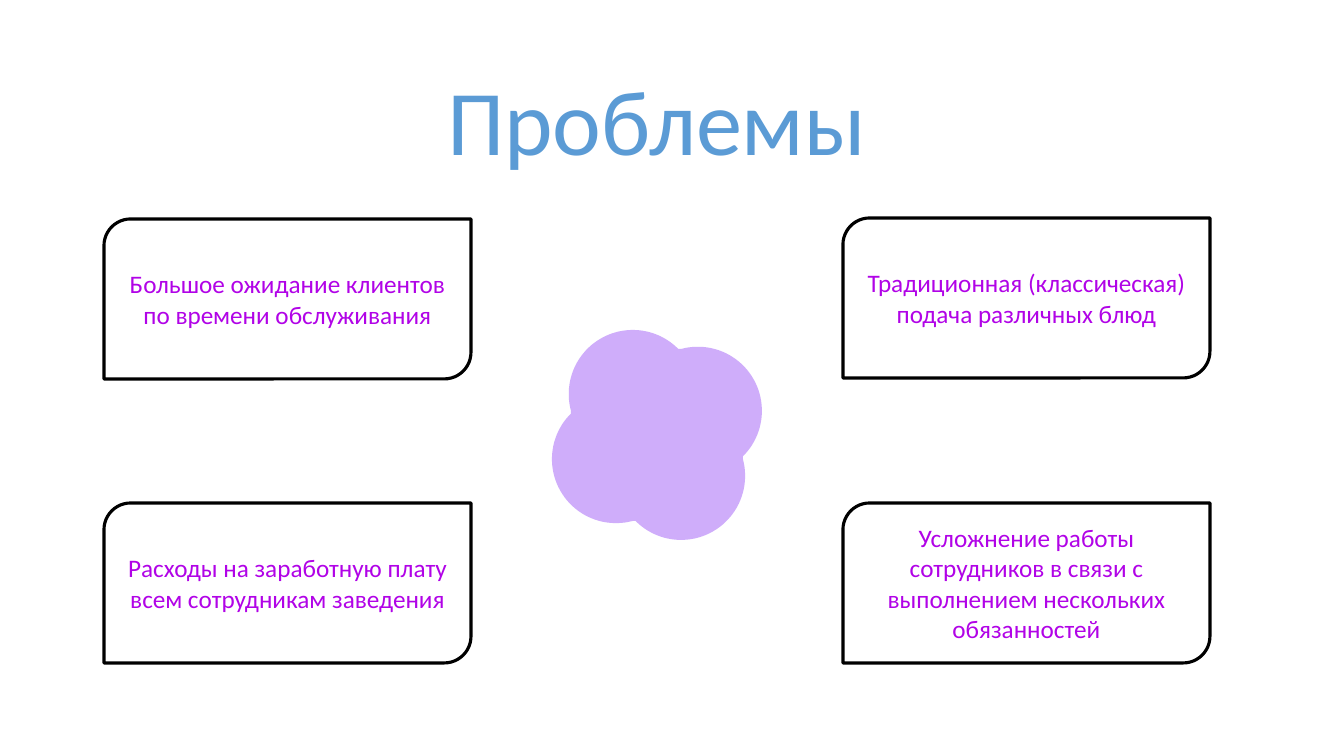
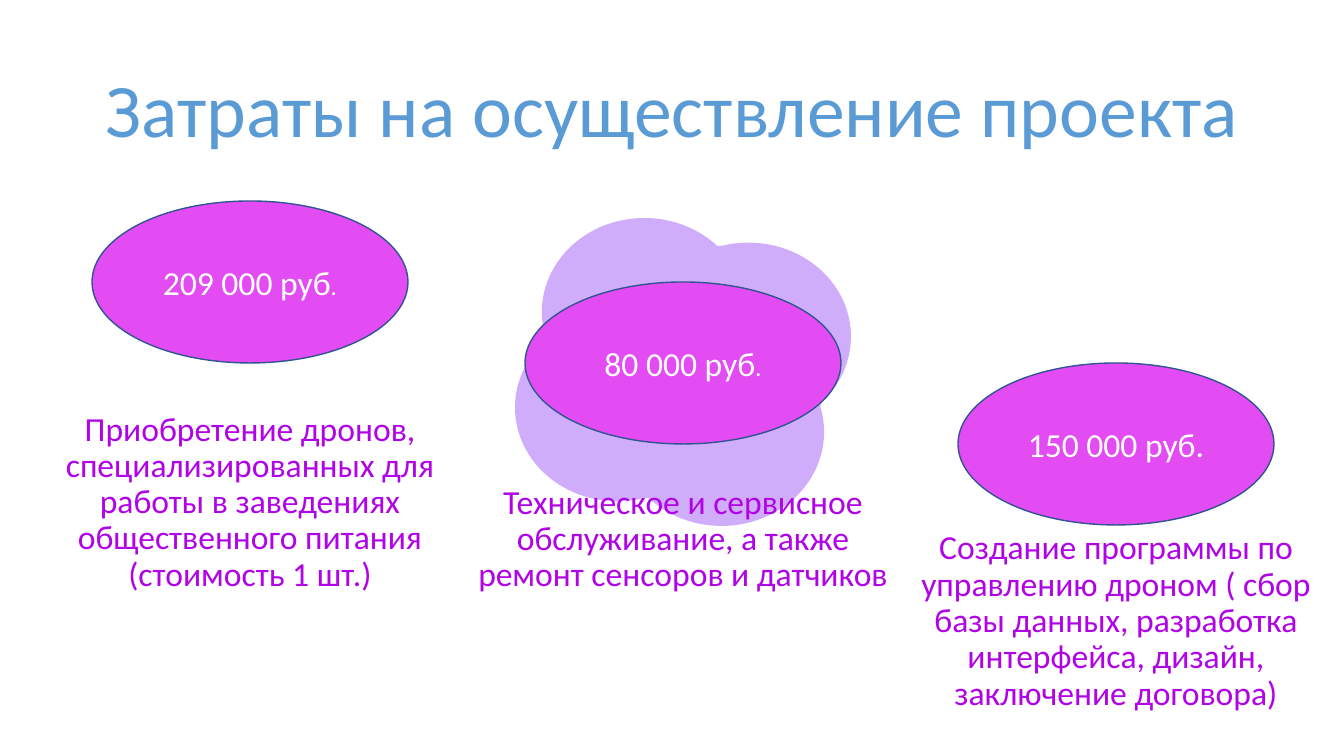
from math import cos, radians, sin, sqrt

from lxml import etree
from pptx import Presentation, util as u
from pptx.dml.color import RGBColor
from pptx.enum import shapes, text
from pptx.oxml.ns import qn

PX = u.Inches(1) / 100.8
FONT = "Calibri"
BLUE = RGBColor(0x5B, 0x9B, 0xD5)
PURPLE = RGBColor(0xB1, 0x03, 0xE7)
PINK = RGBColor(0xE3, 0x4B, 0xF3)
VIOLET = RGBColor(0x95, 0x4B, 0xF6)
NAVY = RGBColor(0x32, 0x54, 0x91)
BLACK = RGBColor(0, 0, 0)
WHITE = RGBColor(255, 255, 255)


def px(*nums):
    return [u.Emu(round(n * PX)) for n in nums]


def write(shape, words, size, color, spacing=1.0, anchor=text.MSO_ANCHOR.MIDDLE):
    """Fill a shape with one centred paragraph and return it."""
    frame = shape.text_frame
    frame.word_wrap = True
    frame.auto_size = text.MSO_AUTO_SIZE.NONE
    frame.vertical_anchor = anchor
    para = frame.paragraphs[0]
    para.text = words
    para.alignment = text.PP_ALIGN.CENTER
    para.line_spacing = spacing
    para.font.name = FONT
    para.font.size = u.Pt(size)
    para.font.color.rgb = color
    return para


deck = Presentation()
deck.slide_width, deck.slide_height = px(1344, 756)

# Each slide: title, its size and box, then the blob's centre and half-sizes
heads = [
    ("Проблемы", 66, (435, -2, 443, 255), (657, 435, 105, 105)),
    ("Затраты на осуществление проекта", 54, (92, 40, 1160, 146), (683, 372, 168, 154)),
]

# The blob is the outline of four equal circles around a centre
RADIUS = 0.61
circles = [(-0.23, -0.39), (0.39, -0.23), (0.23, 0.39), (-0.39, 0.23)]
rim = []
for deg in range(0, 360, 2):
    dx, dy = cos(radians(deg)), sin(radians(deg))
    reach = max(x * dx + y * dy + sqrt(RADIUS**2 - (x * dy - y * dx) ** 2)
                for x, y in circles)
    rim.append((reach * dx, reach * dy))

slides = []
for words, size, box, (mid_x, mid_y, half_w, half_h) in heads:
    slide = deck.slides.add_slide(deck.slide_layouts[5])
    title = slide.shapes.title
    title.left, title.top, title.width, title.height = px(*box)
    write(title, words, size, BLUE, 0.9)

    dots = [px(mid_x + x * half_w, mid_y + y * half_h) for x, y in rim]
    pen = slide.shapes.build_freeform(*dots[0])
    pen.add_line_segments(dots[1:], close=True)
    blob = pen.convert_to_shape()
    blob.shadow.inherit = False
    blob.fill.solid()
    blob.fill.fore_color.rgb = VIOLET
    tint = blob.fill._xPr.find(qn("a:solidFill"))[0]
    etree.SubElement(tint, qn("a:alpha")).set("val", "45000")
    blob.line.fill.background()
    slides.append(slide)

issues, costs = slides

# Problems
cards = [
    (104, 219, "Большое ожидание клиентов по времени обслуживания"),
    (843, 218, "Традиционная (классическая) подача различных блюд"),
    (104, 503, "Расходы на заработную плату всем сотрудникам заведения"),
    (843, 503, "Усложнение работы сотрудников в связи с выполнением нескольких обязанностей"),
]
for x, y, words in cards:
    card = issues.shapes.add_shape(
        shapes.MSO_SHAPE.ROUND_2_DIAG_RECTANGLE, *px(x, y, 367, 160))
    card.shadow.inherit = False
    card.fill.background()
    card.line.color.rgb = BLACK
    card.line.width = u.Pt(2.25)
    write(card, words, 18, PURPLE)

# Costs: price, size of the full stop, top of the note, note
items = [
    ("209 000 руб", 18, 407, "Приобретение дронов, специализированных для работы "
     "в заведениях общественного питания (стоимость 1 шт.)"),
    ("80 000 руб", 18, 480, "Техническое и сервисное обслуживание, а также "
     "ремонт сенсоров и датчиков"),
    ("150 000 руб", 24, 526, "Создание программы по управлению дроном ( сбор базы данных, "
     "разработка интерфейса, дизайн, заключение договора)"),
]
for i, (price, stop, top, words) in enumerate(items):
    left = 92 + 433 * i
    oval = costs.shapes.add_shape(
        shapes.MSO_SHAPE.OVAL, *px(left, 201 + 81 * i, 316, 162))
    oval.shadow.inherit = False
    oval.fill.solid()
    oval.fill.fore_color.rgb = PINK
    oval.line.color.rgb = NAVY
    oval.line.width = u.Pt(1)
    end = write(oval, price, 24, WHITE).add_run()
    end.text = "."
    end.font.size = u.Pt(stop)

    note = costs.shapes.add_textbox(*px(left - 67, top, 450, 146))
    write(note, words, 24, PURPLE, 0.9, text.MSO_ANCHOR.TOP)

deck.save("out.pptx")
